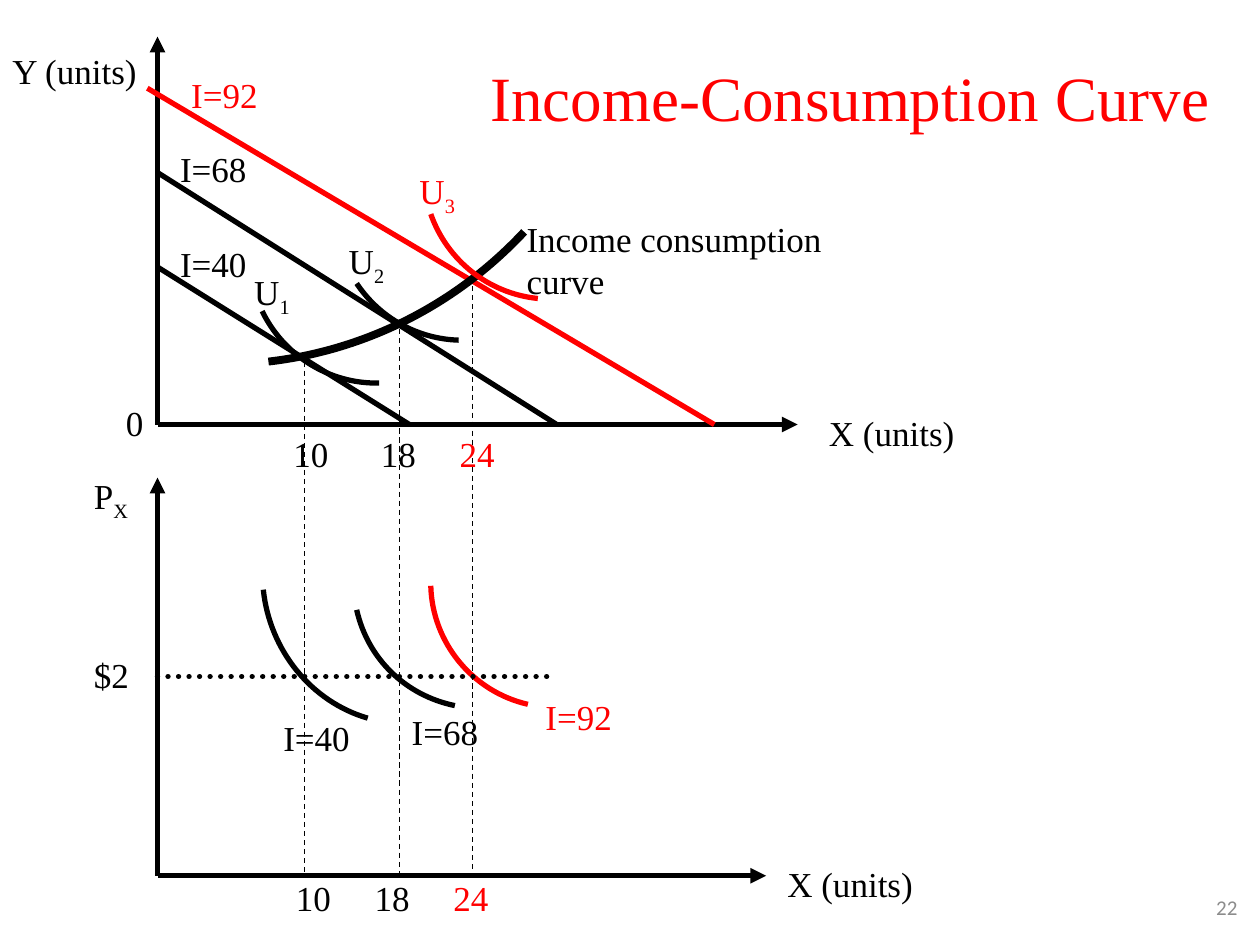
from lxml import etree
from pptx import Presentation
from pptx.dml.color import RGBColor
from pptx.enum.dml import MSO_LINE
from pptx.enum.text import MSO_ANCHOR, PP_ALIGN
from pptx.oxml.ns import qn
from pptx.util import Pt

DASH, DOT = MSO_LINE.DASH, MSO_LINE.ROUND_DOT
LEFT, CENTER, RIGHT = PP_ALIGN.LEFT, PP_ALIGN.CENTER, PP_ALIGN.RIGHT
SERIF, SANS = "Times New Roman", "Calibri"
COLORS = {"ink": "000000", "accent": "FF0000", "muted": "8C8C8C"}

ORIGIN_X, UPPER_BASE, LOWER_BASE = 90, 242.6, 500.4
PRICE_Y = 386.6

AXES = [
    (UPPER_BASE, 455.8, UPPER_BASE),
    (UPPER_BASE, ORIGIN_X, 20.9),
    (LOWER_BASE, ORIGIN_X, 272.9),
    (LOWER_BASE, 437.8, LOWER_BASE),
]
BUDGET_LINES = [
    (ORIGIN_X, 152.6, 234, "ink"),
    (ORIGIN_X, 98.6, 318.2, "ink"),
    (84.2, 50.4, 408.2, "accent"),
]
OPTIMA = [(174.2, 206.6), (228.2, 182.9), (270, 158.4)]

CURVES = [
    ([(299.5, 132.5), (260.6, 174.2), (208.8, 200.2), (153.4, 206.6)], (126, -31.7), "ink", 4.5),
    ([(307.4, 170.6), (279.4, 167.8), (255.6, 149), (246.2, 122.4)], (313.9, 98.6), "accent", 3),
    ([(262.1, 194.4), (238.3, 193.7), (216.7, 181.4), (203.8, 162)], (264.2, 122.4), "ink", 3),
    ([(216.7, 218.9), (188, 219.6), (162, 203), (149.8, 177.8)], (214.6, 146.9), "ink", 3),
    ([(210.2, 410.4), (177.8, 401), (154.1, 371.5), (150.5, 337)], (232.6, 326.9), "ink", 3),
    ([(259.9, 403.2), (231.8, 397.4), (210.2, 376.6), (203.8, 348.5)], (274.3, 332.6), "ink", 3),
    ([(301.7, 402.5), (270, 395.3), (247, 367.2), (246.2, 334.8)], (318.2, 332.6), "accent", 3),
]

LABELS = [
    ("X (units)", "", 466.6, 231.8, 86, "ink"),
    ("Y (units)", "", 0, 24.5, 86, "ink"),
    ("0", "", 64.8, 226, 24, "ink"),
    ("P", "X", 46.6, 267.8, 35, "ink"),
    ("X (units)", "", 442.8, 489.6, 86, "ink"),
    ("$2", "", 46.6, 370, 35, "ink"),
    ("I=92", "", 304.6, 393.8, 53, "accent"),
    ("I=68", "", 228.2, 402.5, 53, "ink"),
    ("I=40", "", 154.8, 406, 53, "ink"),
    ("U", "1", 138.2, 151.2, 35, "ink"),
    ("U", "2", 192.2, 133.2, 35, "ink"),
    ("U", "3", 232.6, 93.6, 35, "accent"),
    ("I=92", "", 102.2, 38.6, 53, "accent"),
    ("I=68", "", 95.8, 80.6, 53, "ink"),
    ("I=40", "", 95.8, 134.8, 53, "ink"),
]
QUANTITIES = [("10\t", "ink"), ("18\t", "ink"), ("24", "accent")]
QUANTITY_ROWS = [(160.6, 243.8, 50, 95), (162, 497.5, 45, 90)]


def style_line(line, color, weight):
    line.color.rgb = RGBColor.from_string(COLORS[color])
    line.width = Pt(weight)


def add_line(slide, start, end, color="ink", weight=3, dash=None, arrow=False):
    connector = slide.shapes.add_connector(1, *map(Pt, (*start, *end)))
    style_line(connector.line, color, weight)
    if dash is not None:
        connector.line.dash_style = dash
    if dash == DOT:
        connector.line._get_or_add_ln().set("cap", "rnd")
    if arrow:
        etree.SubElement(connector.line._get_or_add_ln(), qn("a:tailEnd"), type="triangle")
    etree.SubElement(connector._element.spPr, qn("a:effectLst"))


def add_curve(slide, controls, center, color, weight):
    start, *bend, center = [(Pt(x), Pt(y)) for x, y in (*controls, center)]
    builder = slide.shapes.build_freeform(*start)
    builder.add_line_segments([bend[-1], center], close=False)
    curve = builder.convert_to_shape()
    curve.fill.background()
    curve.shadow.inherit = False
    style_line(curve.line, color, weight)

    path_list = next(curve._element.iter(qn("a:pathLst")))
    size = {"w": str(curve.width), "h": str(curve.height)}
    path_list.clear()
    arc = [("moveTo", [start]), ("cubicBezTo", bend)]
    sector = arc + [("lnTo", [center]), ("close", [])]
    for steps, look in ((arc, {"fill": "none"}), (sector, {"stroke": "0"})):
        outline = etree.SubElement(path_list, qn("a:path"), **size, **look)
        for command, points in steps:
            step = etree.SubElement(outline, qn("a:" + command))
            for x, y in points:
                etree.SubElement(step, qn("a:pt"), x=str(x - curve.left), y=str(y - curve.top))


def add_box(slide, left, top, width, height=31, wrap=False, align=LEFT):
    box = slide.shapes.add_textbox(*map(Pt, (left, top, width, height)))
    box.text_frame.word_wrap = wrap
    paragraph = box.text_frame.paragraphs[0]
    paragraph.alignment = align
    return box.text_frame, paragraph


def add_run(paragraph, text, color="ink", size=20, font=SERIF):
    run = paragraph.add_run()
    run.text = text
    run.font.name = font
    run.font.size = Pt(size)
    run.font.color.rgb = RGBColor.from_string(COLORS[color])
    return run


def main():
    prs = Presentation()
    prs.slide_width, prs.slide_height = Pt(720), Pt(540)
    slide = prs.slides.add_slide(prs.slide_layouts[6])

    for base, end_x, end_y in AXES:
        add_line(slide, (ORIGIN_X, base), (end_x, end_y), arrow=True)
    for start_x, start_y, end_x, color in BUDGET_LINES:
        add_line(slide, (start_x, start_y), (end_x, UPPER_BASE), color)
    for curve in CURVES:
        add_curve(slide, *curve)
    for x, y in OPTIMA:
        add_line(slide, (x, y), (x, LOWER_BASE), weight=0.75, dash=DASH)
    add_line(slide, (ORIGIN_X, PRICE_Y), (318, PRICE_Y), dash=DOT)

    for text, subscript, left, top, width, color in LABELS:
        _, paragraph = add_box(slide, left, top, width)
        add_run(paragraph, text, color)
        if subscript:
            run = add_run(paragraph, subscript, color)
            run._r.get_or_add_rPr().set("baseline", "-25000")

    for left, top, *stops in QUANTITY_ROWS:
        _, paragraph = add_box(slide, left, top, 135, wrap=True)
        tabs = etree.SubElement(paragraph._p.get_or_add_pPr(), qn("a:tabLst"))
        for stop in stops:
            etree.SubElement(tabs, qn("a:tab"), pos=str(Pt(stop)), algn="l")
        for text, color in QUANTITIES:
            add_run(paragraph, text, color)

    _, curve_label = add_box(slide, 293.8, 121, 200, 55, wrap=True)
    add_run(curve_label, "Income consumption curve")

    frame, title = add_box(slide, 275.8, 30.2, 419.8, 36, align=CENTER)
    frame.margin_left = frame.margin_right = 0
    add_run(title, "Income-Consumption Curve", "accent", 36)

    frame, page_number = add_box(slide, 660.2, 504, 54, 28.8, wrap=True, align=RIGHT)
    frame.vertical_anchor = MSO_ANCHOR.MIDDLE
    add_run(page_number, "22", "muted", 12, SANS)

    prs.save("out.pptx")


if __name__ == "__main__":
    main()
